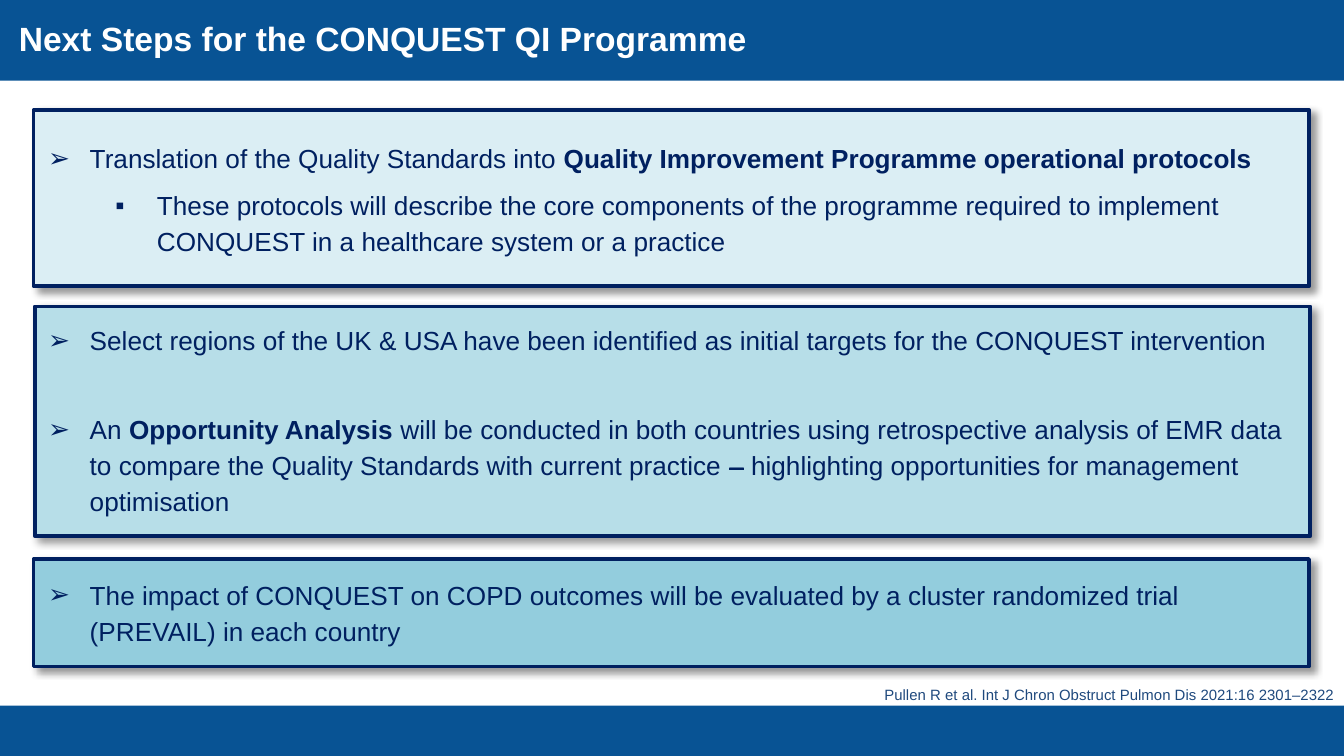
from lxml import etree
from pptx import Presentation
from pptx import util as u
from pptx.dml import color
from pptx.enum import shapes, text
from pptx.oxml import ns, parse_xml

BLUE, NAVY, WHITE, SLATE = "085394", "002060", "FFFFFF", "1F497D"
WIDTH = 10
HEIGHT = WIDTH * 9 / 16
PANELS = [
    (0.25, 0.82, 1.31, "DBEEF4"),
    (0.26, 2.28, 1.71, "B7DEE8"),
    (0.25, 4.16, 0.8, "93CDDD"),
]
STEPS = [
    (0, 0, [("Translation of the Quality Standards into ", {}),
            ("Quality Improvement Programme operational protocols", {"bold": True})]),
    (1, 3, [("These protocols will describe the core components of the programme "
             "required to implement CONQUEST in a healthcare system or a practice", {})]),
    (0, 31, [("Select regions of the UK & USA have been identified as initial targets "
              "for the CONQUEST intervention", {})]),
    (0, 25.5, [("An ", {}),
               ("Opportunity Analysis ", {"bold": True}),
               ("will be conducted in both countries using retrospective analysis of EMR "
                "data to compare the Quality Standards with current practice ", {}),
               ("–", {"strike": True}),
               (" highlighting opportunities for management optimisation", {})]),
    (0, 28.2, [("The impact of CONQUEST on COPD outcomes will be evaluated by a cluster "
                "randomized trial (PREVAIL) in each country", {})]),
]
LEVELS = [("➢", 0.31), ("▪", 0.81)]
HANGING = 0.31


def rgb(value):
    return color.RGBColor.from_string(value)


def apply(obj, formats):
    for name, value in formats.items():
        setattr(obj, name, value)


def box(*lengths):
    return [u.Inches(n) for n in lengths]


def add_run(p, words, size, hue, bold=False, strike=False):
    r = p.add_run()
    r.text = words
    apply(r.font, {"name": "Arial", "size": u.Pt(size), "bold": bold})
    r.font.color.rgb = rgb(hue)
    if strike:
        r._r.get_or_add_rPr().set("strike", "sngStrike")


def add_rect(s, lengths, fill):
    sp = s.shapes.add_shape(shapes.MSO_SHAPE.RECTANGLE, *box(*lengths))
    sp.shadow.inherit = False
    sp.fill.solid()
    sp.fill.fore_color.rgb = rgb(fill)
    sp.line.fill.background()
    return sp


def add_panel(s, left, top, height, fill):
    sp = add_rect(s, (left, top, 9.49, height), fill)
    sp.line.color.rgb = rgb(NAVY)
    sp.line.width = u.Pt(2)
    effects = sp._element.spPr.find(ns.qn("a:effectLst"))
    effects.append(parse_xml(
        f'<a:outerShdw {ns.nsdecls("a")} blurRad="{u.Pt(4)}" dist="{u.Pt(3)}" '
        'dir="2700000" algn="tl" rotWithShape="0"><a:srgbClr val="000000">'
        '<a:alpha val="40000"/></a:srgbClr></a:outerShdw>'))


def add_text_frame(s, lengths):
    tf = s.shapes.add_textbox(*box(*lengths)).text_frame
    apply(tf, {"word_wrap": True, "auto_size": text.MSO_AUTO_SIZE.SHAPE_TO_FIT_TEXT})
    return tf


def set_title(s, words):
    sp = s.shapes.title
    sp._element.getparent().append(sp._element)
    apply(sp, dict(zip(("left", "top", "width", "height"), box(0, 0.06, WIDTH, 0.39))))
    tf = sp.text_frame
    sides = ("margin_left", "margin_top", "margin_right", "margin_bottom")
    apply(tf, dict.fromkeys(sides, u.Inches(0.07)))
    apply(tf, {"vertical_anchor": text.MSO_ANCHOR.TOP, "word_wrap": True,
               "auto_size": text.MSO_AUTO_SIZE.NONE})
    p = tf.paragraphs[0]
    p.alignment = text.PP_ALIGN.LEFT
    p._p.get_or_add_pPr().set("marL", str(u.Inches(0.07)))
    add_run(p, words, 18, WHITE, bold=True)


def set_bullet(p, level):
    mark, indent = LEVELS[level]
    pPr = p._p.get_or_add_pPr()
    pPr.set("marL", str(u.Inches(indent)))
    pPr.set("indent", str(-u.Inches(HANGING)))
    etree.SubElement(pPr, ns.qn("a:buFont"), typeface="Arial")
    etree.SubElement(pPr, ns.qn("a:buChar"), char=mark)


def add_steps(s):
    tf = add_text_frame(s, (0.26, 0.98, 9.4, 3.93))
    for i, (level, before, runs) in enumerate(STEPS):
        p = tf.add_paragraph() if i else tf.paragraphs[0]
        set_bullet(p, level)
        apply(p, {"level": level, "line_spacing": 1.14,
                  "space_before": u.Pt(before), "space_after": u.Pt(3)})
        for words, formats in runs:
            add_run(p, words, 14, NAVY, **formats)


def add_reference(s, words):
    p = add_text_frame(s, (5.74, 5.05, 4.29, 0.24)).paragraphs[0]
    p.alignment = text.PP_ALIGN.RIGHT
    add_run(p, words, 8, SLATE)


def main():
    prs = Presentation()
    apply(prs, {"slide_width": u.Inches(WIDTH), "slide_height": u.Inches(HEIGHT)})
    s = prs.slides.add_slide(prs.slide_layouts[5])
    for panel in PANELS:
        add_panel(s, *panel)
    add_rect(s, (0, 0, WIDTH, 0.6), BLUE)
    set_title(s, "Next Steps for the CONQUEST QI Programme")
    add_steps(s)
    add_rect(s, (0, 5.25, WIDTH, HEIGHT - 5.25), BLUE)
    add_reference(s, "Pullen R et al. Int J Chron Obstruct Pulmon Dis 2021:16 2301–2322")
    prs.save("out.pptx")


if __name__ == "__main__":
    main()
